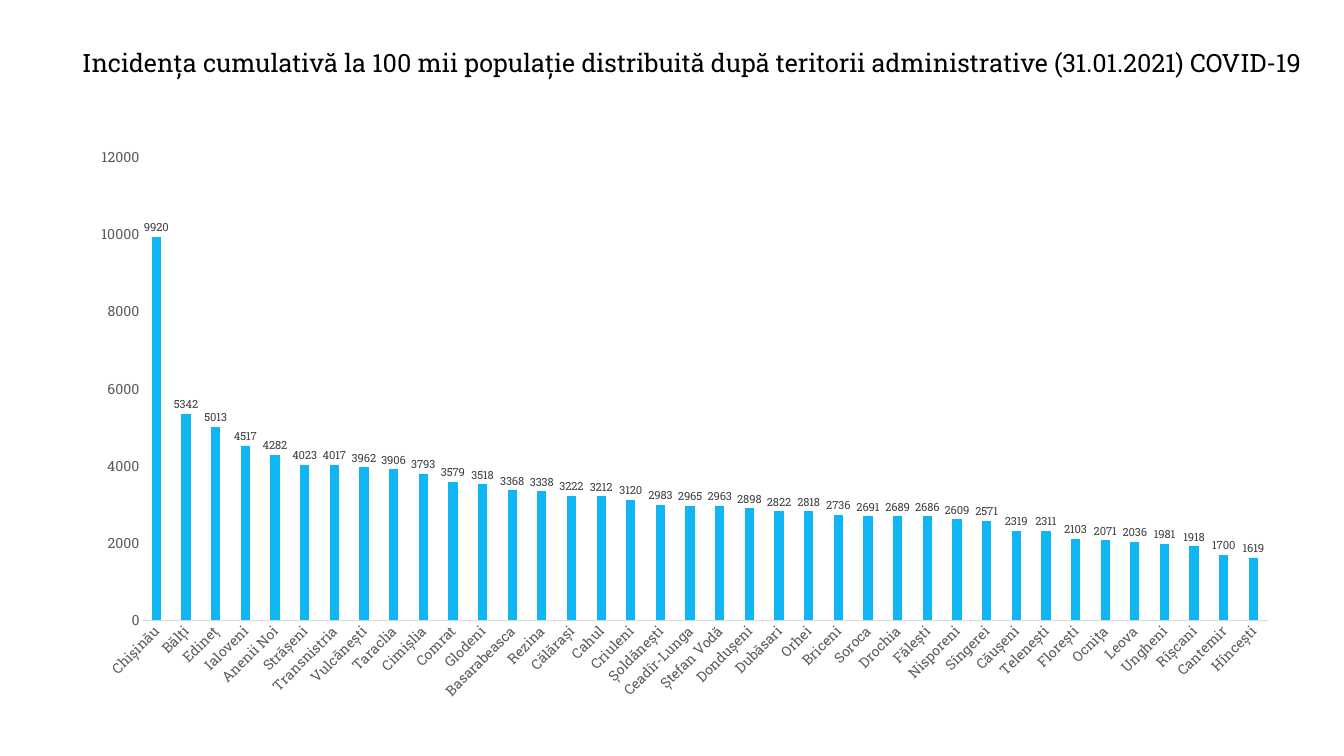
from dataclasses import dataclass

from pptx import Presentation
from pptx.chart.data import CategoryChartData
from pptx.dml.color import RGBColor
from pptx.enum.chart import XL_CHART_TYPE, XL_LABEL_POSITION, XL_TICK_MARK
from pptx.enum.text import MSO_ANCHOR, MSO_AUTO_SIZE, PP_ALIGN
from pptx.util import Inches, Pt


@dataclass(frozen=True)
class Theme:
    """Hold the font, colours and type sizes of the slide."""
    font: str = "Roboto Slab"
    ink: str = "000000"
    axis_text: str = "595959"
    label_text: str = "404040"
    axis_line: str = "D9D9D9"
    column: str = "10B6F4"
    title_size: int = 36
    axis_size: int = 20
    label_size: int = 16


THEME = Theme()
HEADING = (
    "Incidența cumulativă la 100 mii populație distribuită după "
    "teritorii administrative (31.01.2021) COVID-19"
)
INCIDENCE = {
    "Chișinău": 9920, "Bălți": 5342, "Edineț": 5013, "Ialoveni": 4517,
    "Anenii Noi": 4282, "Strășeni": 4023, "Transnistria": 4017,
    "Vulcănești": 3962, "Taraclia": 3906, "Cimișlia": 3793,
    "Comrat": 3579, "Glodeni": 3518, "Basarabeasca": 3368,
    "Rezina": 3338, "Călărași": 3222, "Cahul": 3212, "Criuleni": 3120,
    "Șoldănești": 2983, "Ceadîr-Lunga": 2965, "Ștefan Vodă": 2963,
    "Dondușeni": 2898, "Dubăsari": 2822, "Orhei": 2818, "Briceni": 2736,
    "Soroca": 2691, "Drochia": 2689, "Fălești": 2686, "Nisporeni": 2609,
    "Sîngerei": 2571, "Căușeni": 2319, "Telenești": 2311,
    "Florești": 2103, "Ocnița": 2071, "Leova": 2036, "Ungheni": 1981,
    "Rîșcani": 1918, "Cantemir": 1700, "Hîncești": 1619,
}


def style_font(font, size, color):
    """Apply the theme face with a size and colour."""
    font.name = THEME.font
    font.size = Pt(size)
    font.bold = False
    font.color.rgb = RGBColor.from_string(color)


def place_heading(heading, left, top, width, height):
    """Fit the title placeholder to its box and fill it."""
    heading.left, heading.top = Inches(left), Inches(top)
    heading.width, heading.height = Inches(width), Inches(height)
    frame = heading.text_frame
    frame.text = HEADING
    frame.word_wrap = True
    frame.auto_size = MSO_AUTO_SIZE.NONE
    frame.vertical_anchor = MSO_ANCHOR.TOP
    paragraph = frame.paragraphs[0]
    paragraph.alignment = PP_ALIGN.LEFT
    style_font(paragraph.font, THEME.title_size, THEME.ink)


def style_axes(chart):
    """Format the territory axis and the incidence axis."""
    territories, incidence = chart.category_axis, chart.value_axis
    for axis in (territories, incidence):
        axis.major_tick_mark = XL_TICK_MARK.NONE
        axis.minor_tick_mark = XL_TICK_MARK.NONE
        axis.has_major_gridlines = False
        style_font(axis.tick_labels.font, THEME.axis_size, THEME.axis_text)
    territories.format.line.color.rgb = RGBColor.from_string(THEME.axis_line)
    territories.format.line.width = Pt(0.75)
    slant = territories._element.find(".//{*}txPr/{*}bodyPr")
    slant.set("rot", "-2700000")
    slant.set("vert", "horz")
    incidence.format.line.fill.background()
    incidence.minimum_scale, incidence.maximum_scale = 0, 12000
    incidence.major_unit = 2000
    incidence.tick_labels.number_format = "0"
    incidence.tick_labels.number_format_is_linked = False


def place_incidence_chart(slide, left, top, width, height):
    """Draw the incidence columns inside the given box."""
    figures = CategoryChartData(number_format="0")
    figures.categories = list(INCIDENCE)
    figures.add_series("Series 1", list(INCIDENCE.values()))
    chart = slide.shapes.add_chart(
        XL_CHART_TYPE.COLUMN_CLUSTERED,
        Inches(left), Inches(top), Inches(width), Inches(height), figures,
    ).chart
    chart.has_title = False
    chart.has_legend = False
    style_font(chart.font, THEME.axis_size, THEME.ink)
    style_axes(chart)

    columns = chart.plots[0]
    columns.gap_width = 219
    columns.overlap = -27
    columns.vary_by_categories = False
    fill = columns.series[0].format.fill
    fill.solid()
    fill.fore_color.rgb = RGBColor.from_string(THEME.column)
    columns.has_data_labels = True
    labels = columns.data_labels
    labels.show_value = True
    labels.position = XL_LABEL_POSITION.OUTSIDE_END
    labels.number_format = "0"
    labels.number_format_is_linked = False
    style_font(labels.font, THEME.label_size, THEME.label_text)


def main():
    """Build and save the slide."""
    deck = Presentation()
    deck.slide_width, deck.slide_height = Inches(26.67), Inches(15)
    slide = deck.slides.add_slide(deck.slide_layouts.get_by_name("Title Only"))
    place_heading(slide.shapes.title, 1.53, 0.89, 25.63, 0.71)
    place_incidence_chart(slide, 1.53, 2.7, 24.12, 11.41)
    deck.save("out.pptx")


if __name__ == "__main__":
    main()
